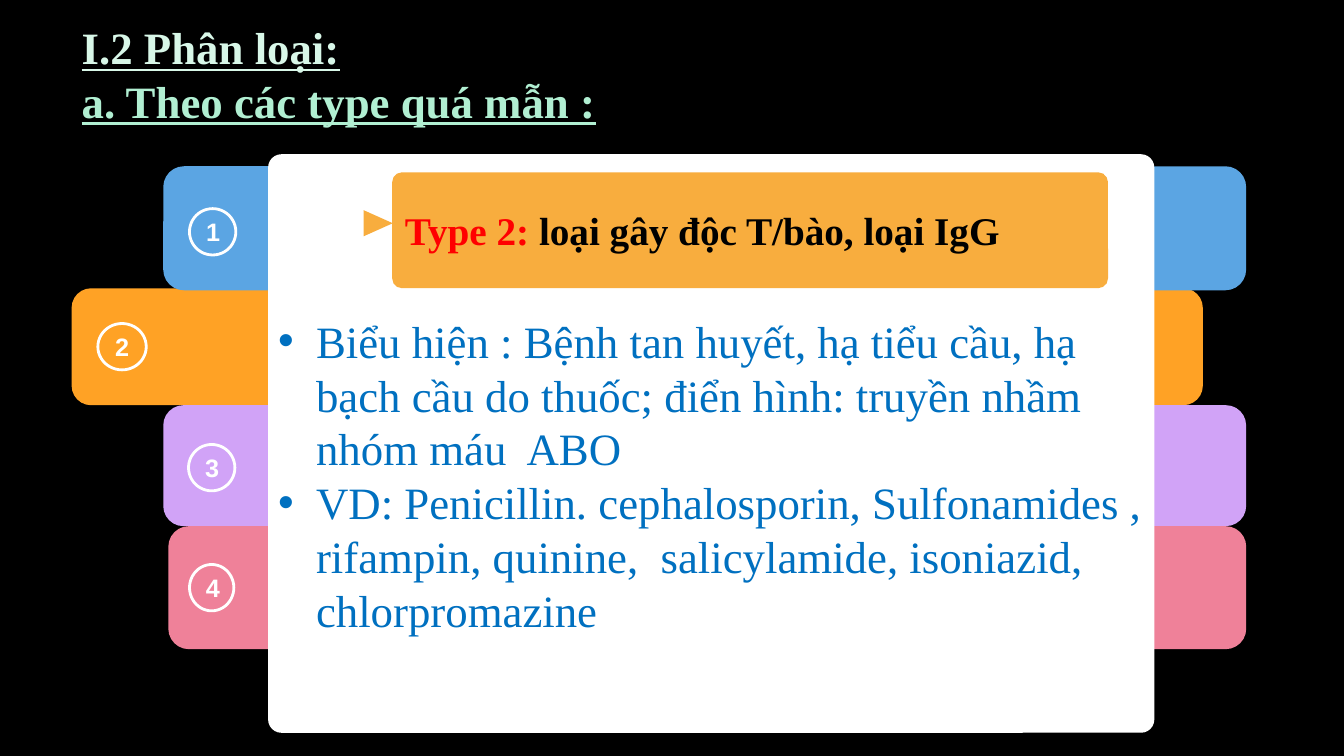
from pptx import Presentation
from pptx.dml.color import RGBColor
from pptx.enum.shapes import MSO_SHAPE as SHAPE
from pptx.enum.text import MSO_ANCHOR as ANCHOR, MSO_AUTO_SIZE as AUTO_SIZE, PP_ALIGN as ALIGN
from pptx.util import Inches, Pt

BLACK = RGBColor(0x00, 0x00, 0x00)
WHITE = RGBColor(0xFF, 0xFF, 0xFF)
BLUE = RGBColor(0x5B, 0xA5, 0xE3)
ORANGE = RGBColor(0xFF, 0xA2, 0x25)
PURPLE = RGBColor(0xD1, 0xA3, 0xF7)
PINK = RGBColor(0xEF, 0x81, 0x99)
AMBER = RGBColor(0xF8, 0xAD, 0x3E)
RED = RGBColor(0xFF, 0x00, 0x00)
TEXT_BLUE = RGBColor(0x00, 0x70, 0xC0)
PALE_MINT = RGBColor(0xD8, 0xF7, 0xE8)
MINT = RGBColor(0xB1, 0xEF, 0xD2)
SERIF = "Times New Roman"

deck = Presentation()
deck.slide_width, deck.slide_height = Inches(13.33), Inches(7.5)
slide = deck.slides.add_slide(deck.slide_layouts[1])
slide.background.fill.solid()
slide.background.fill.fore_color.rgb = BLACK


def share(left, top, width, height):
    """Turn percentages of the slide's width and height into lengths."""
    across, down = deck.slide_width / 100, deck.slide_height / 100
    return int(left * across), int(top * down), int(width * across), int(height * down)


def add_plain(kind, area, fill=None, corner=None):
    """Add a shape without shadow or outline; no fill when none is given."""
    shape = slide.shapes.add_shape(kind, *share(*area))
    shape.shadow.inherit = False
    shape.line.fill.background()
    if fill is None:
        shape.fill.background()
    else:
        shape.fill.solid()
        shape.fill.fore_color.rgb = fill
    if corner is not None:
        shape.adjustments[0] = corner
    return shape


# Coloured bands, the first one on top
for band_area, colour in [
    ((5.33, 38.13, 84.17, 15.47), ORANGE),
    ((12.15, 53.6, 80.57, 16), PURPLE),
    ((12.53, 69.6, 80.2, 16.27), PINK),
    ((12.15, 22, 80.57, 16.4), BLUE),
]:
    add_plain(SHAPE.ROUNDED_RECTANGLE, band_area, colour)

# Numbered rings
rings = [(14.1, 27.6, 3.45), (7.28, 42.8, 3.6), (14.03, 58.8, 3.45), (14.1, 74.67, 3.3)]
for number, (left, top, width) in enumerate(rings, start=1):
    ring = add_plain(SHAPE.OVAL, (left, top, width, 6.13))
    ring.line.color.rgb = WHITE
    ring.line.width = Pt(2)
    ring.text_frame.vertical_anchor = ANCHOR.MIDDLE
    digit = ring.text_frame.paragraphs[0]
    digit.text = str(number)
    digit.alignment = ALIGN.CENTER
    digit.font.name, digit.font.size, digit.font.bold = "Arial", Pt(18), True
    digit.font.color.rgb = WHITE

# White panel with its heading banner
add_plain(SHAPE.ROUNDED_RECTANGLE, (19.95, 20.4, 65.94, 76.53), WHITE, 0.023)
pointer = add_plain(SHAPE.ISOSCELES_TRIANGLE, (27.16, 27.6, 1.95, 3.87), AMBER)
pointer.rotation = 90
banner = add_plain(SHAPE.ROUNDED_RECTANGLE, (29.18, 22.8, 53.26, 15.33), AMBER, 0.084)
banner.text_frame.vertical_anchor = ANCHOR.MIDDLE
heading = banner.text_frame.paragraphs[0]
heading.alignment = ALIGN.LEFT
heading.space_before = Pt(5.6)
heading.font.name, heading.font.size, heading.font.bold = SERIF, Pt(28), True
for words, colour in [("Type 2: ", RED), ("loại gây độc T/bào, loại IgG", BLACK)]:
    run = heading.add_run()
    run.text = words
    run.font.color.rgb = colour

# Title and list, brought in front of the panel
title, details = slide.shapes.title, slide.placeholders[1]
for holder, area, lines, colours in [
    (title, (5.33, 2, 50.04, 15.73),
     ["I.2 Phân loại:", "a. Theo các type quá mẫn :"], [PALE_MINT, MINT]),
    (details, (19.95, 40.8, 65.94, 51.6),
     ["Biểu hiện : Bệnh tan huyết, hạ tiểu cầu, hạ bạch cầu do thuốc; "
      "điển hình: truyền nhầm nhóm máu  ABO",
      "VD: Penicillin. cephalosporin, Sulfonamides , rifampin, quinine,  "
      "salicylamide, isoniazid, chlorpromazine"], [TEXT_BLUE, TEXT_BLUE]),
]:
    holder.left, holder.top, holder.width, holder.height = share(*area)
    frame = holder.text_frame
    frame.text = "\n".join(lines)
    frame.word_wrap = True
    frame.auto_size = AUTO_SIZE.NONE
    frame.vertical_anchor = ANCHOR.TOP
    for line, colour in zip(frame.paragraphs, colours):
        line.alignment = ALIGN.LEFT
        line.space_before = Pt(0)
        line.font.name, line.font.size = SERIF, Pt(32)
        line.font.color.rgb = colour
        if holder is title:
            line.font.bold = line.font.underline = True
    slide.shapes._spTree.append(holder._element)

deck.save("out.pptx")
